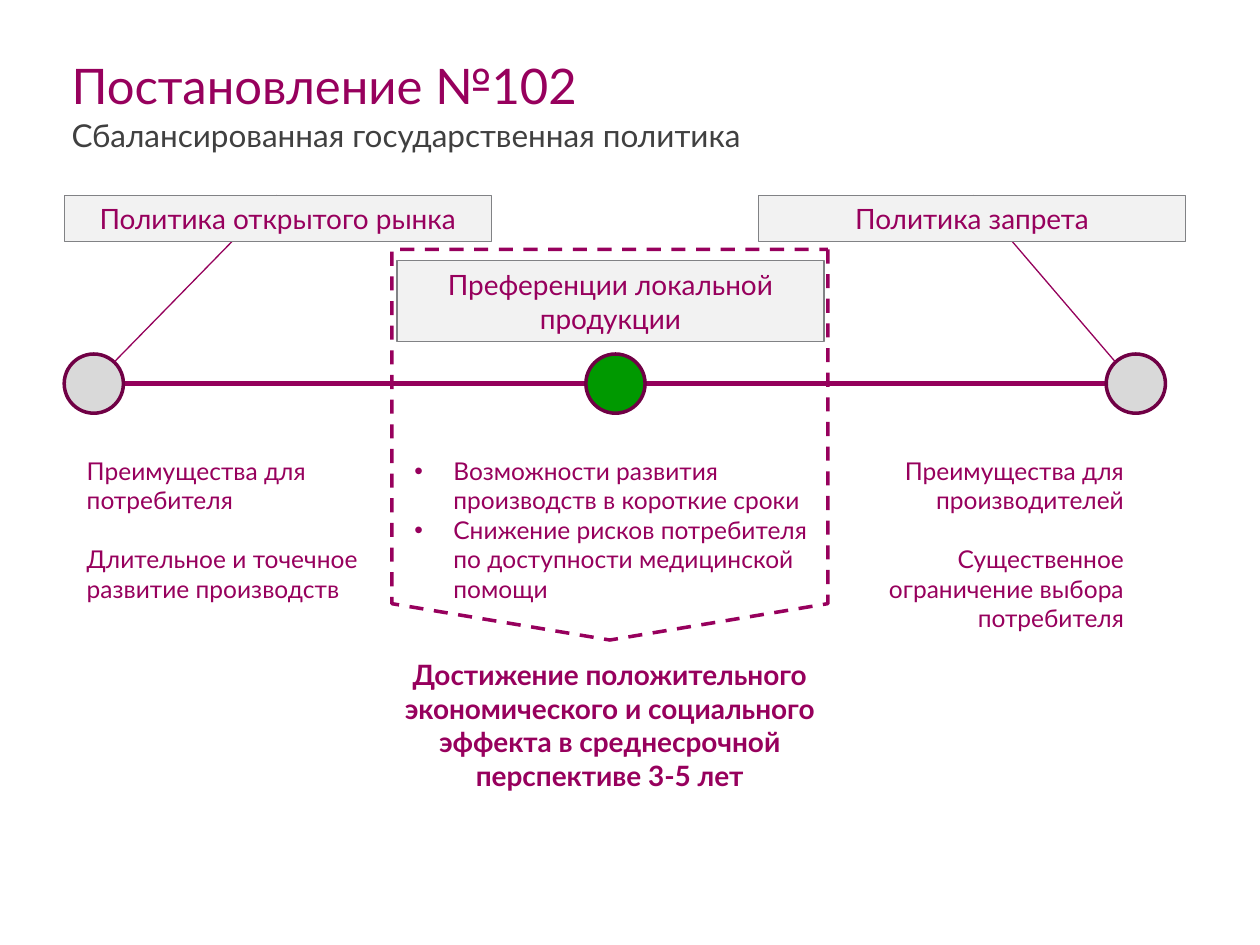
from pptx import Presentation
from pptx.util import Inches, Pt
from pptx.dml.color import RGBColor
from pptx.enum import dml, shapes, text
from pptx.oxml.ns import qn
from lxml import etree

HUES = {"plum": "97005D", "line": "94005B", "ring": "700045", "gray": "D9D9D9",
        "green": "009900", "pale": "F2F2F2", "edge": "818285", "dark": "404040"}
FONT = "Lato"
ALIGN = text.PP_ALIGN
KIND = shapes.MSO_SHAPE


def hue(name):
    """Return the named colour."""
    return RGBColor.from_string(HUES[name])


def write(shape, lines, size, color="plum", align=ALIGN.LEFT, bold=False, gap=0):
    """Fill a shape with styled paragraphs, gap points apart."""
    frame = shape.text_frame
    frame.word_wrap = True
    frame.text = "\n".join(lines)
    for i, para in enumerate(frame.paragraphs):
        para.alignment = align
        if i and gap:
            para.space_before = Pt(gap)
        for run in para.runs:
            font = run.font
            font.name, font.size, font.bold = FONT, Pt(size), bold
            font.color.rgb = hue(color)


def label(slide, box, lines, size, **style):
    """Add a text box and return it."""
    shape = slide.shapes.add_textbox(*map(Inches, box))
    write(shape, lines, size, **style)
    return shape


def form(slide, kind, box, fill, edge, width):
    """Add a preset shape with a flat fill and outline."""
    shape = slide.shapes.add_shape(kind, *map(Inches, box))
    shape.shadow.inherit = False
    if fill:
        shape.fill.solid()
        shape.fill.fore_color.rgb = hue(fill)
    else:
        shape.fill.background()
    shape.line.color.rgb = hue(edge)
    shape.line.width = Pt(width)
    return shape


def link(slide, start, end, width):
    """Draw a straight line between two points."""
    line = slide.shapes.add_connector(shapes.MSO_CONNECTOR.STRAIGHT,
                                      *map(Inches, (*start, *end)))
    line.line.color.rgb = hue("line")
    line.line.width = Pt(width)
    etree.SubElement(line._element.spPr, qn("a:effectLst"))


def plate(slide, box, words):
    """Add a framed caption."""
    shape = form(slide, KIND.RECTANGLE, box, "pale", "edge", 0.75)
    shape.text_frame.vertical_anchor = text.MSO_ANCHOR.MIDDLE
    write(shape, [words], 16, align=ALIGN.CENTER)


def bullet(shape, depth):
    """Give every paragraph a hanging bullet."""
    for para in shape.text_frame.paragraphs:
        props = para._p.get_or_add_pPr()
        props.set("marL", str(Inches(depth)))
        props.set("indent", str(-Inches(depth)))
        etree.SubElement(props, qn("a:buFont"), typeface="Arial")
        etree.SubElement(props, qn("a:buChar"), char="•")


def header(slide, box):
    """Place the title and subtitle."""
    x, y, w, h = box
    label(slide, (x, y, w, 0.63), ["Постановление №102"], 28)
    label(slide, (x, y + 0.48, w, 0.54),
          ["Сбалансированная государственная политика"], 18, color="dark")


def scale(slide, box):
    """Place the policy axis, its nodes and its captions."""
    x, y, w, h = box
    dot, wide = 0.47, 3.39
    axis = y + h - dot / 2
    link(slide, (x + 0.16, axis), (x + 8.51, axis), 3)
    for left, fill in ((0, "gray"), (4.14, "green"), (8.27, "gray")):
        form(slide, KIND.OVAL, (x + left, y + h - dot, dot, dot), fill, "ring", 2)
    for left, top, foot, words in (
            (0, 1.69, 0.4, "Политика открытого рынка"),
            (w - wide, 7.21, 8.34, "Политика запрета")):
        link(slide, (x + top, y), (x + foot, y + 1.32), 0.75)
        plate(slide, (x + left, y, wide, 0.37), words)
    plate(slide, (x + 2.64, y + 0.52, wide, 0.64), "Преференции локальной продукции")


def effects(slide, box):
    """Place the three columns of consequences."""
    x, y, w, h = box
    label(slide, (x, y, 2.37, 1.28),
          ["Преимущества для потребителя",
           "Длительное и точечное развитие производств"], 14, gap=16.8)
    bullet(label(slide, (x + 2.6, y, 3.39, 1.04),
                 ["Возможности развития производств в короткие сроки",
                  "Снижение рисков потребителя по доступности медицинской помощи"], 14), 0.31)
    label(slide, (x + w - 2.16, y, 2.16, h),
          ["Преимущества для производителей",
           "Существенное ограничение выбора потребителя"], 14,
          align=ALIGN.RIGHT, gap=16.8)


def result(slide, box):
    """Place the dashed pointer and the outcome below it."""
    x, y, w, h = box
    turn = (x + (w - h) / 2, y + (h - w) / 2, h, w)
    frame = form(slide, KIND.PENTAGON, turn, None, "plum", 2)
    frame.rotation = 90
    frame.adjustments[0] = 0.093
    frame.line.dash_style = dml.MSO_LINE.DASH
    label(slide, (x - 0.08, y + h + 0.09, 3.62, 1.18),
          ["Достижение положительного экономического и социального эффекта "
           "в среднесрочной перспективе 3-5 лет"], 16, align=ALIGN.CENTER, bold=True)


def main():
    """Build and save the slide."""
    deck = Presentation()
    deck.slide_width, deck.slide_height = Inches(10), Inches(7.5)
    slide = deck.slides.add_slide(deck.slide_layouts[6])
    header(slide, (0.47, 0.39, 9, 1.02))
    scale(slide, (0.51, 1.55, 8.9, 1.73))
    effects(slide, (0.59, 3.57, 8.43, 1.51))
    result(slide, (3.11, 1.98, 3.46, 3.1))
    deck.save("out.pptx")


if __name__ == "__main__":
    main()
